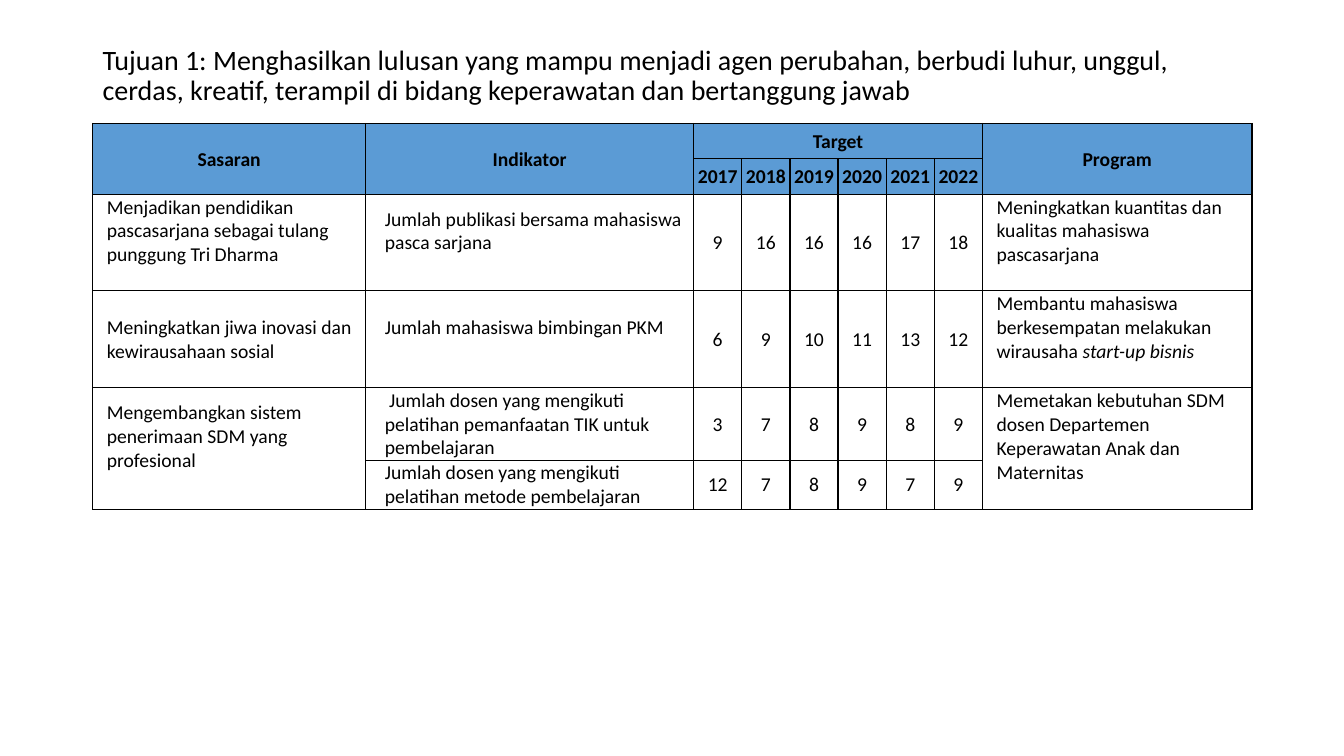
from dataclasses import dataclass

from lxml import etree
from pptx import Presentation
from pptx.dml.color import RGBColor
from pptx.enum.text import MSO_ANCHOR, PP_ALIGN
from pptx.oxml.ns import qn
from pptx.util import Pt

MIDDLE = MSO_ANCHOR.MIDDLE
LEFT, CENTER = PP_ALIGN.LEFT, PP_ALIGN.CENTER


@dataclass(frozen=True)
class Theme:
    font: str = "Calibri"
    ink: str = "000000"
    header: str = "5B9BD5"
    title_size: float = 20
    table_size: float = 14
    border: float = 1
    inset: float = 0.7


@dataclass(frozen=True)
class Entry:
    """Left-aligned cell text; lift is the free space kept below it."""
    runs: tuple
    indent: float
    lift: float = 0
    first_line: float = 0


class SlideBuilder:
    def __init__(self, slide, theme):
        self.slide = slide
        self.theme = theme

    def add_run(self, paragraph, text, size, bold=False, italic=False):
        run = paragraph.add_run()
        run.text = text
        font = run.font
        font.name, font.size = self.theme.font, Pt(size)
        font.bold, font.italic = bold, italic
        font.color.rgb = RGBColor.from_string(self.theme.ink)

    def add_title(self, text, left, top, width, height):
        box = self.slide.shapes.add_textbox(Pt(left), Pt(top), Pt(width), Pt(height))
        frame = box.text_frame
        frame.word_wrap = True
        frame.vertical_anchor = MIDDLE
        paragraph = frame.paragraphs[0]
        paragraph.line_spacing = 0.9
        self.add_run(paragraph, text, self.theme.title_size)

    def add_table(self, left, top, widths, heights):
        table = self.slide.shapes.add_table(
            len(heights), len(widths), Pt(left), Pt(top),
            Pt(sum(widths)), Pt(sum(heights))).table
        table.first_row = table.horz_banding = False
        for column, width in zip(table.columns, widths):
            column.width = Pt(width)
        for row, height in zip(table.rows, heights):
            row.height = Pt(height)
        for cell in table.iter_cells():
            self.style_cell(cell)
        return table

    def style_cell(self, cell):
        properties = cell._tc.get_or_add_tcPr()
        for side in ("a:lnL", "a:lnR", "a:lnT", "a:lnB"):
            line = etree.SubElement(properties, qn(side), w=str(Pt(self.theme.border)))
            fill = etree.SubElement(line, qn("a:solidFill"))
            etree.SubElement(fill, qn("a:srgbClr"), val=self.theme.ink)
        cell.fill.background()
        cell.vertical_anchor = MIDDLE
        cell.margin_left = cell.margin_right = cell.margin_top = Pt(self.theme.inset)
        cell.margin_bottom = 0

    def write_centred(self, cell, text, bold=False):
        paragraph = cell.text_frame.paragraphs[0]
        paragraph.alignment = CENTER
        self.add_run(paragraph, text, self.theme.table_size, bold)

    def write_header(self, cell, text):
        cell.fill.solid()
        cell.fill.fore_color.rgb = RGBColor.from_string(self.theme.header)
        self.write_centred(cell, text, bold=True)

    def write_entry(self, cell, entry):
        cell.margin_bottom = Pt(entry.lift)
        paragraph = cell.text_frame.paragraphs[0]
        paragraph.alignment = LEFT
        properties = paragraph._p.get_or_add_pPr()
        properties.set("marL", str(Pt(entry.indent)))
        properties.set("indent", str(Pt(entry.first_line)))
        for text, italic in entry.runs:
            self.add_run(paragraph, text, self.theme.table_size, italic=italic)


TITLE = ("Tujuan 1: Menghasilkan lulusan yang mampu menjadi agen perubahan, "
         "berbudi luhur, unggul, cerdas, kreatif, terampil di bidang "
         "keperawatan dan bertanggung jawab")
YEARS = range(2017, 2023)
FIRST_YEAR, PROGRAM = 2, 2 + len(YEARS)
LINE = 17
OUTER_INDENT, INDICATOR_INDENT = 9.4, 13
COLUMN_WIDTHS = [195, 234.3] + [34.4] * len(YEARS) + [192.5]
ROW_HEIGHTS = [25.3, 25.3, 69, 69, 52, 34.9]

HEADERS = {(0, 0): "Sasaran", (0, 1): "Indikator",
           (0, FIRST_YEAR): "Target", (0, PROGRAM): "Program"}
HEADERS.update({(1, FIRST_YEAR + i): str(year) for i, year in enumerate(YEARS)})


def outer(text, lift=LINE, italic_end=""):
    runs = ((text, False), (italic_end, True)) if italic_end else ((text, False),)
    return Entry(runs, OUTER_INDENT, lift)


def indicator(text, lift=0, first_line=0):
    return Entry(((text, False),), INDICATOR_INDENT, lift, first_line)


# Sasaran, Indikator, yearly targets, Program; None continues the cell above
GOALS = [
    (outer("Menjadikan pendidikan pascasarjana sebagai tulang punggung Tri Dharma"),
     indicator("Jumlah publikasi bersama mahasiswa pasca sarjana", LINE),
     (9, 16, 16, 16, 17, 18),
     outer("Meningkatkan kuantitas dan kualitas mahasiswa pascasarjana")),
    (outer("Meningkatkan jiwa inovasi dan kewirausahaan sosial", 0),
     indicator("Jumlah mahasiswa bimbingan PKM", LINE),
     (6, 9, 10, 11, 13, 12),
     outer("Membantu mahasiswa berkesempatan melakukan wirausaha ",
           italic_end="start-up bisnis")),
    (outer("Mengembangkan sistem penerimaan SDM yang profesional"),
     indicator("Jumlah dosen yang mengikuti pelatihan pemanfaatan TIK untuk "
               "pembelajaran", first_line=3),
     (3, 7, 8, 9, 8, 9),
     outer("Memetakan kebutuhan SDM dosen Departemen Keperawatan Anak dan Maternitas")),
    (None,
     indicator("Jumlah dosen yang mengikuti pelatihan metode pembelajaran"),
     (12, 7, 8, 9, 7, 9),
     None),
]


def main():
    presentation = Presentation()
    presentation.slide_width, presentation.slide_height = Pt(960), Pt(540)
    slide = presentation.slides.add_slide(presentation.slide_layouts[6])
    builder = SlideBuilder(slide, Theme())

    builder.add_title(TITLE, 66.2, 28.8, 828, 51.1)
    targets = builder.add_table(66.2, 88.2, COLUMN_WIDTHS, ROW_HEIGHTS)

    for column in (0, 1, PROGRAM):
        targets.cell(0, column).merge(targets.cell(1, column))
    targets.cell(0, FIRST_YEAR).merge(targets.cell(0, PROGRAM - 1))
    for column in (0, PROGRAM):
        targets.cell(4, column).merge(targets.cell(5, column))

    for (row, column), text in HEADERS.items():
        builder.write_header(targets.cell(row, column), text)
    for row, (goal, measure, values, program) in enumerate(GOALS, start=2):
        for column, entry in ((0, goal), (1, measure), (PROGRAM, program)):
            if entry:
                builder.write_entry(targets.cell(row, column), entry)
        for column, value in enumerate(values, start=FIRST_YEAR):
            builder.write_centred(targets.cell(row, column), str(value))

    presentation.save("out.pptx")


if __name__ == "__main__":
    main()
